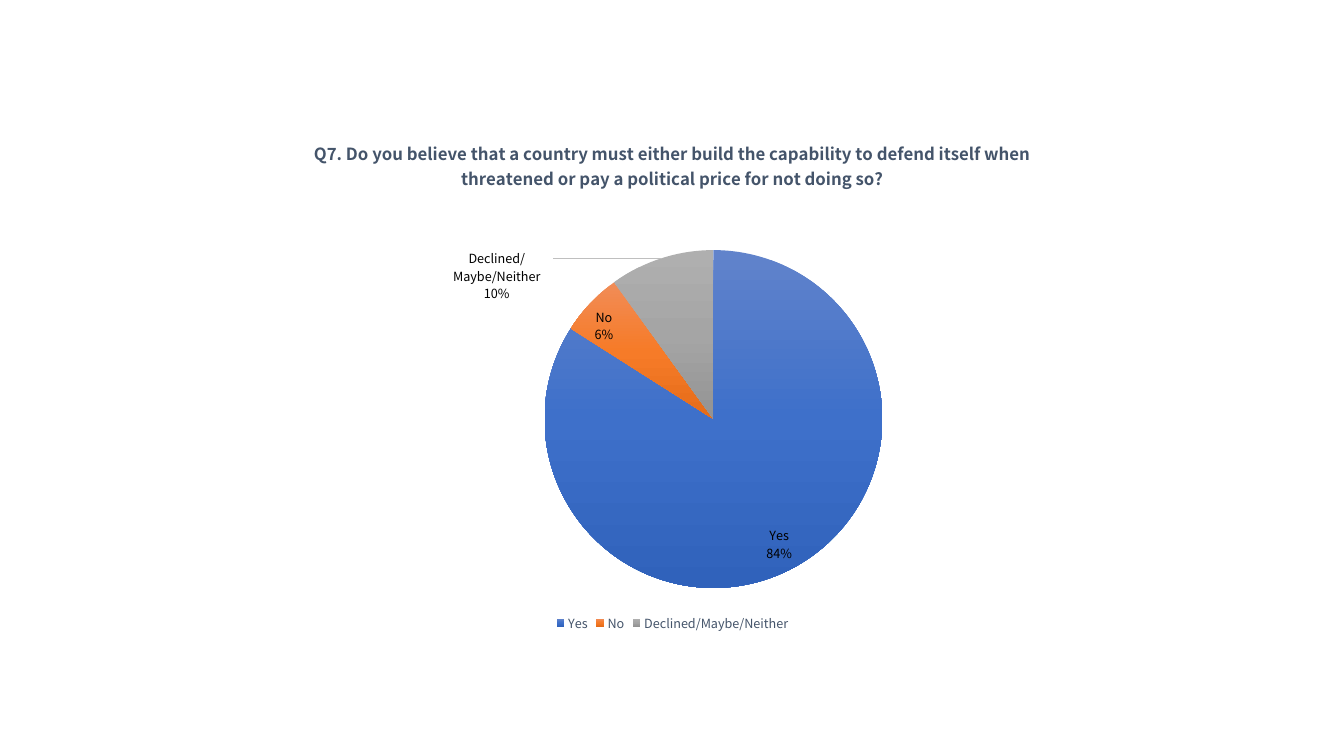
from copy import deepcopy

from lxml import etree
from pptx import Presentation
from pptx import util as u
from pptx.chart.data import CategoryChartData
from pptx.dml.color import RGBColor
from pptx.enum import chart as ec
from pptx.oxml import parse_xml
from pptx.oxml.ns import nsdecls, qn

FONT = "Noto Sans CJK KR"
QUERY = ("Q7. Do you believe that a country must either build the capability to "
         "defend itself when threatened or pay a political price for not doing so?")
VOTES = {"Yes": 84, "No": 6, "Declined/Maybe/Neither": 10}
SHADES = [("6183CB", "3E70CA", "3062BB"),
          ("F18C57", "F67B28", "E56C19"),
          ("AFAFAF", "A5A5A5", "939393")]


def style(font, size, color, bold=False):
    """Set the face, size, colour and weight of a font."""
    font.name, font.size, font.bold = FONT, u.Pt(size), bold
    font.color.rgb = RGBColor.from_string(color)


def shade(point, colors):
    """Fill a slice from top to bottom with evenly spaced colours."""
    step = 100000 // (len(colors) - 1)
    stops = "".join(f'<a:gs pos="{i * step}"><a:srgbClr val="{c}"/></a:gs>'
                    for i, c in enumerate(colors))
    point.format.line.fill.background()
    point.format.fill.background()
    props = point.format.fill._xPr
    props.replace(props.find(qn("a:noFill")), parse_xml(
        f'<a:gradFill {nsdecls("a")} rotWithShape="1"><a:gsLst>{stops}</a:gsLst>'
        '<a:lin ang="5400000" scaled="0"/></a:gradFill>'))


def place(x, y, extra=""):
    """Return a manual chart layout at the given fractions."""
    return parse_xml(f'<c:layout {nsdecls("c")}><c:manualLayout>{extra}'
                     f'<c:x val="{x}"/><c:y val="{y}"/>'
                     '</c:manualLayout></c:layout>')


def label(series):
    """Label the slices and pull the last label out to the left."""
    marks = series.data_labels
    marks.show_value = False
    marks.show_category_name = marks.show_percentage = True
    marks.number_format, marks.number_format_is_linked = "0%", False
    marks.position = ec.XL_LABEL_POSITION.INSIDE_END
    style(marks.font, 9, "000000")
    root = marks._element
    for old in root.findall(qn("c:showLeaderLines")):
        root.remove(old)
    etree.SubElement(root, qn("c:separator")).text = "\n"
    parts = [deepcopy(part) for part in root]
    etree.SubElement(root, qn("c:showLeaderLines")).set("val", "1")
    root.append(parse_xml(
        f'<c:leaderLines {nsdecls("c", "a")}><c:spPr><a:ln w="9525"><a:solidFill>'
        '<a:srgbClr val="BFBFBF"/></a:solidFill></a:ln></c:spPr></c:leaderLines>'))
    pulled = etree.Element(qn("c:dLbl"))
    etree.SubElement(pulled, qn("c:idx")).set("val", str(len(VOTES) - 1))
    pulled.append(place(-0.23, -0.03))
    pulled.extend(parts)
    root.insert(0, pulled)


def poll(slide, left, top, width, height):
    """Draw the poll result as a pie chart in the given box."""
    data = CategoryChartData()
    data.categories = list(VOTES)
    data.add_series(QUERY, list(VOTES.values()))
    chart = slide.shapes.add_chart(ec.XL_CHART_TYPE.PIE, left, top,
                                   width, height, data).chart
    style(chart.font, 10, "000000")
    chart.has_title = True
    run = chart.chart_title.text_frame.paragraphs[0].add_run()
    run.text = QUERY
    style(run.font, 12, "44546A", True)
    chart.chart_title.include_in_layout = False
    chart.has_legend = True
    chart.legend.position = ec.XL_LEGEND_POSITION.BOTTOM
    chart.legend.include_in_layout = False
    style(chart.legend.font, 9, "44546A")
    plot = chart.plots[0]
    plot.vary_by_categories = True
    series = plot.series[0]
    for i, colors in enumerate(SHADES):
        shade(series.points[i], colors)
    label(series)
    area = chart._chartSpace.chart.plotArea
    for old in area.findall(qn("c:layout")):
        area.remove(old)
    frame = place(0.36, 0.25, '<c:layoutTarget val="inner"/>'
                  '<c:xMode val="edge"/><c:yMode val="edge"/>')
    for side, part in (("w", 0.37), ("h", 0.66)):
        etree.SubElement(frame[0], qn(f"c:{side}")).set("val", str(part))
    area.insert(0, frame)


def main():
    """Build the slide and save it."""
    deck = Presentation()
    deck.slide_width, deck.slide_height = u.Cm(33.87), u.Cm(19.05)
    slide = deck.slides.add_slide(deck.slide_layouts[6])
    poll(slide, u.Cm(5.44), u.Cm(3.02), u.Cm(23.01), u.Cm(13))
    deck.save("out.pptx")


if __name__ == "__main__":
    main()
